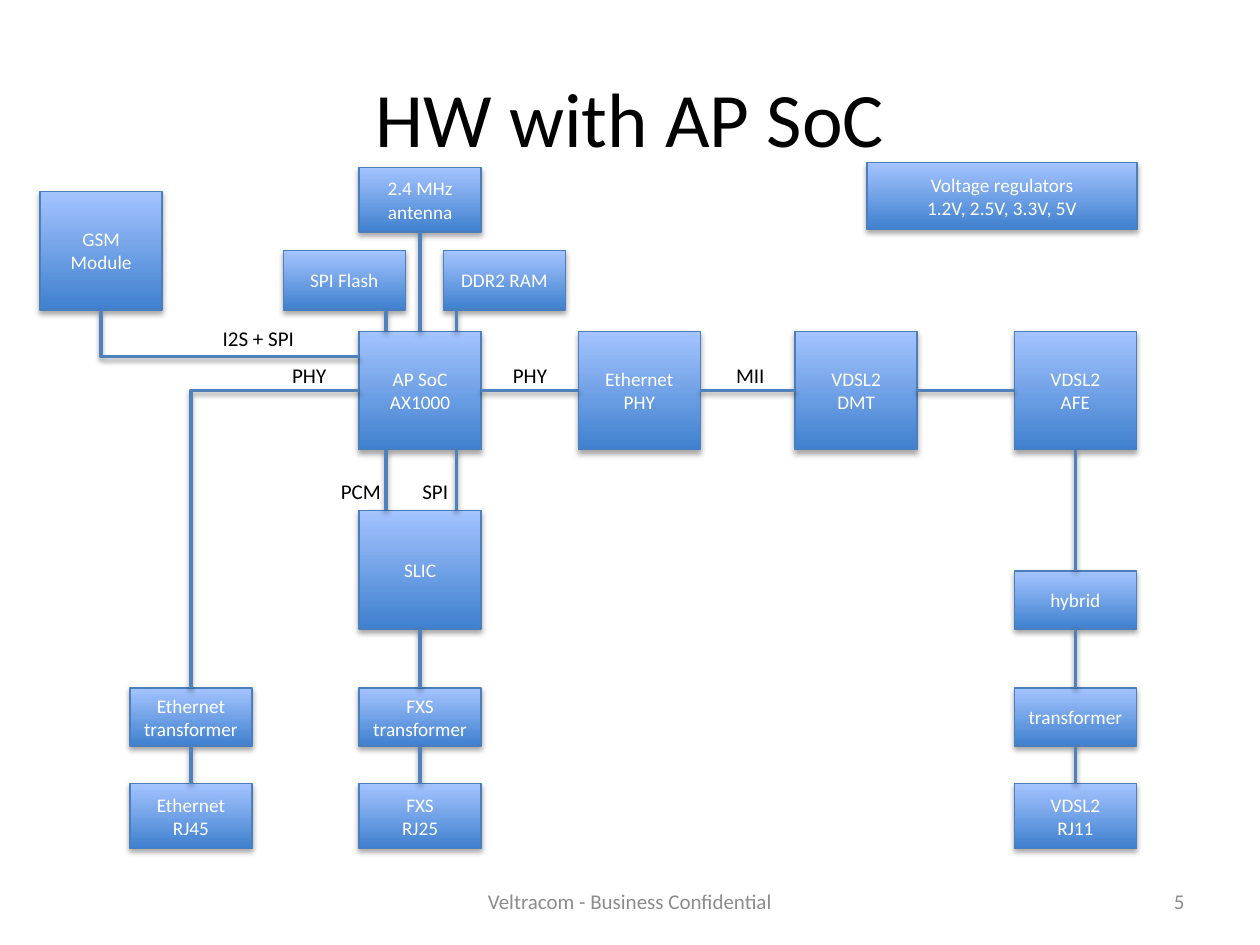
from lxml.etree import SubElement
from pptx import Presentation
from pptx.dml.color import RGBColor as RGB
from pptx.enum.shapes import MSO_CONNECTOR as LINK, MSO_SHAPE as SHAPE
from pptx.enum.text import MSO_ANCHOR as ANCHOR, PP_ALIGN as ALIGN
from pptx.oxml.ns import qn
from pptx.util import Cm, Pt

HUE = {"dark": "3F80CE", "light": "A4C4FF", "edge": "4B7EBC", "wire": "4F81BD",
       "white": "FFFFFF", "black": "000000", "grey": "8C8C8C"}


def shade(spot, dist, alpha):
    """Give a shape or connector a soft shadow that falls straight down."""
    props = spot._element.spPr
    fx = props.find(qn("a:effectLst"))
    if fx is None:
        fx = SubElement(props, qn("a:effectLst"))
    cast = SubElement(fx, qn("a:outerShdw"), blurRad="40000", dist=str(dist),
                      dir="5400000", rotWithShape="0")
    tint = SubElement(cast, qn("a:srgbClr"), val=HUE["black"])
    SubElement(tint, qn("a:alpha"), val=str(alpha))


def write(shape, text, size, hue, align=ALIGN.CENTER, anchor=ANCHOR.MIDDLE):
    frame = shape.text_frame
    frame.word_wrap = True
    frame.vertical_anchor = anchor
    frame.text = text
    for para in frame.paragraphs:
        para.alignment = align
        para.font.name = "Calibri"
        para.font.size = Pt(size)
        para.font.color.rgb = RGB.from_string(HUE[hue])


deck = Presentation()
deck.slide_width, deck.slide_height = Cm(25.4), Cm(19.05)
shapes = deck.slides.add_slide(deck.slide_layouts[6]).shapes

# Blocks: columns and rows shared by the diagram, in cm
WIDE, TALL, LOW, JACK = 2.46, 2.39, 1.17, 1.3
LAN, CORE, PHY, DMT, AFE = 2.62, 7.24, 11.66, 16.03, 20.45
MAIN, TRAFO, PORT = 6.68, 13.87, 15.8
MEM, MEMH = 5.05, 1.2

blocks = {
    "dmt": ("VDSL2\nDMT", DMT, MAIN, WIDE, TALL),
    "afe": ("VDSL2\nAFE", AFE, MAIN, WIDE, TALL),
    "phy": ("Ethernet PHY", PHY, MAIN, WIDE, TALL),
    "soc": ("AP SoC\nAX1000", CORE, MAIN, WIDE, TALL),
    "slic": ("SLIC", CORE, 10.29, WIDE, TALL),
    "gsm": ("GSM Module", 0.81, 3.86, WIDE, TALL),
    "antenna": ("2.4 MHz\nantenna", CORE, 3.38, WIDE, JACK),
    "ram": ("DDR2 RAM", 8.94, MEM, WIDE, MEMH),
    "flash": ("SPI Flash", 5.71, MEM, WIDE, MEMH),
    "power": ("Voltage regulators\n1.2V, 2.5V, 3.3V, 5V", 17.48, 3.28, 5.44, 1.35),
    "hybrid": ("hybrid", AFE, 11.51, WIDE, LOW),
    "lan trafo": ("Ethernet transformer", LAN, TRAFO, WIDE, LOW),
    "fxs trafo": ("FXS\ntransformer", CORE, TRAFO, WIDE, LOW),
    "dsl trafo": ("transformer", AFE, TRAFO, WIDE, LOW),
    "rj45": ("Ethernet\nRJ45", LAN, PORT, WIDE, JACK),
    "rj25": ("FXS\nRJ25", CORE, PORT, WIDE, JACK),
    "rj11": ("VDSL2\nRJ11", AFE, PORT, WIDE, JACK),
}
box = {}
for name, (text, x, y, w, h) in blocks.items():
    rect = shapes.add_shape(SHAPE.RECTANGLE, Cm(x), Cm(y), Cm(w), Cm(h))
    rect.fill.gradient()
    rect.fill.gradient_angle = 90
    for stop, hue in zip(rect.fill.gradient_stops, ("dark", "light")):
        stop.color.rgb = RGB.from_string(HUE[hue])
    rect.line.color.rgb = RGB.from_string(HUE["edge"])
    rect.line.width = Pt(0.75)
    rect.shadow.inherit = False
    shade(rect, 23000, 35000)
    write(rect, text, 11, "white")
    box[name] = rect

# Wires joined to the middle of a side at both ends
TOP, LEFT, BOTTOM, RIGHT = range(4)
wires = []
joins = [
    ("soc", RIGHT, "phy", LEFT), ("phy", RIGHT, "dmt", LEFT),
    ("dmt", RIGHT, "afe", LEFT), ("antenna", BOTTOM, "soc", TOP),
    ("slic", BOTTOM, "fxs trafo", TOP), ("fxs trafo", BOTTOM, "rj25", TOP),
    ("lan trafo", BOTTOM, "rj45", TOP), ("afe", BOTTOM, "hybrid", TOP),
    ("hybrid", BOTTOM, "dsl trafo", TOP), ("dsl trafo", BOTTOM, "rj11", TOP),
    ("soc", LEFT, "lan trafo", TOP),
]
for start, side, end, goal in joins:
    kind = LINK.ELBOW if side == LEFT else LINK.STRAIGHT
    wire = shapes.add_connector(kind, 0, 0, 0, 0)
    wire.begin_connect(box[start], side)
    wire.end_connect(box[end], goal)
    wires.append(wire)

# Paired buses above and below the SoC
for x in (7.78, 9.2):
    for top, end in ((MEM + MEMH, MAIN), (MAIN + TALL, 10.29)):
        wires.append(shapes.add_connector(LINK.STRAIGHT, Cm(x), Cm(top), Cm(x), Cm(end)))

# The GSM bus meets the SoC above the middle of its side
bus = shapes.add_connector(LINK.ELBOW, Cm(CORE), Cm(7.19), Cm(2.04), Cm(6.25))
bus.end_connect(box["gsm"], BOTTOM)
wires.append(bus)

for wire in wires:
    wire.line.color.rgb = RGB.from_string(HUE["wire"])
    wire.line.width = Pt(2)
    shade(wire, 20000, 38000)
    shape = wire._element.spPr.find(qn("a:prstGeom"))
    if shape.get("prst") == "bentConnector3":
        shape.set("prst", "bentConnector2")  # a single corner

labels = [
    ("PHY", 5.51, 7.19, 1.45), ("PHY", 9.96, 7.19, 1.45), ("MII", 14.4, 7.19, 1.45),
    ("PCM", 6.55, 9.53, 1.45), ("SPI", 8.05, 9.53, 1.45), ("I2S + SPI", 3.84, 6.43, 2.74),
]
for text, x, y, w in labels:
    label = shapes.add_textbox(Cm(x), Cm(y), Cm(w), Cm(0.77))
    write(label, text, 12, "black", anchor=ANCHOR.TOP)

title = shapes.add_textbox(Cm(1.27), Cm(0.76), Cm(22.86), Cm(3.18))
write(title, "HW with AP SoC", 44, "black")
foot = shapes.add_textbox(Cm(8.68), Cm(17.66), Cm(8.04), Cm(1.01))
write(foot, "Veltracom - Business Confidential", 12, "grey")
page = shapes.add_textbox(Cm(18.2), Cm(17.66), Cm(5.93), Cm(1.01))
write(page, "5", 12, "grey", ALIGN.RIGHT)

deck.save("out.pptx")
